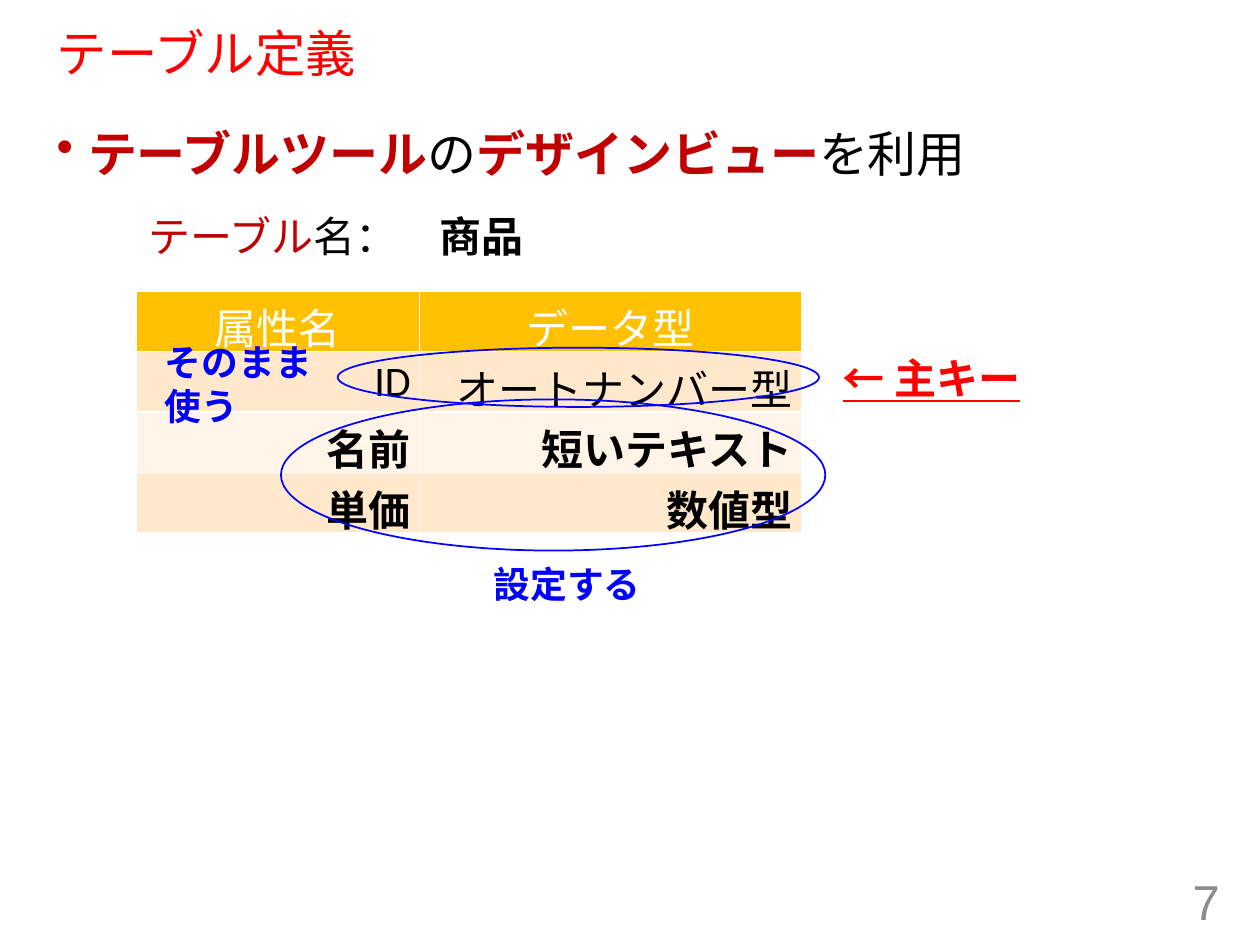
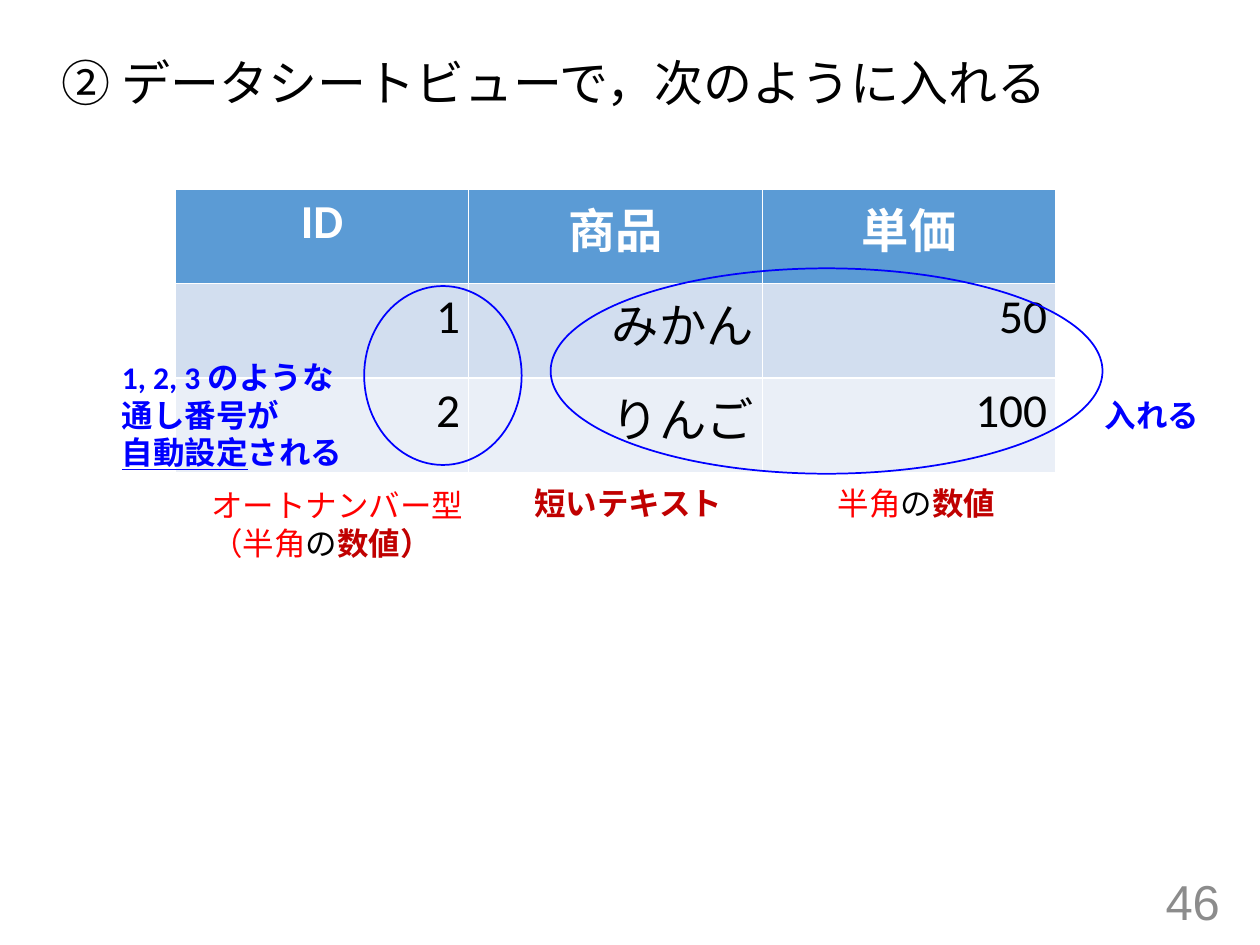
import pptx
import pptx.util
import pptx.dml.color
import pptx.enum.shapes
import pptx.enum.text
import pptx.oxml
import pptx.oxml.ns
from pptx.util import Inches

ALIGN = pptx.enum.text.PP_ALIGN
ANCHOR = pptx.enum.text.MSO_ANCHOR
FIT = pptx.enum.text.MSO_AUTO_SIZE

RED, DARK, BLUE = "FF0000", "C00000", "0000FF"
BLACK, WHITE, GREY = "000000", "FFFFFF", "8C8C8C"
ASIAN = "Noto Sans CJK JP"


def color(code):
    return pptx.dml.color.RGBColor.from_string(code)


def place(box):
    return [Inches(n) for n in box]


def part(text, code=BLACK, bold=False, under=False):
    return text, (code, bold, under)


class Deck:
    font = "Calibri"
    plain = "Arial"
    size = 28

    def __init__(self):
        self.file = pptx.Presentation()
        self.file.slide_width = Inches(10)
        self.file.slide_height = Inches(7.5)
        self.slide = None

    def page(self, number):
        self.slide = self.file.slides.add_slide(self.file.slide_layouts[5])
        box = self.frame((7.53, 6.95, 2.25, 0.4), True)
        box.vertical_anchor = ANCHOR.MIDDLE
        self.line(box.paragraphs[0], [part(str(number), GREY)], self.size, self.plain, ALIGN.RIGHT)

    def ink(self, font, style):
        code, font.bold, font.underline = style
        font.color.rgb = color(code)

    def line(self, para, parts, size, name=None, align=ALIGN.LEFT):
        para.alignment = align
        para.font.size = pptx.util.Pt(size)
        para.font.name = name or self.font
        same = len({style for _, style in parts}) == 1
        if same:
            self.ink(para.font, parts[0][1])
        for text, style in parts:
            run = para.add_run()
            run.text = text
            if not same:
                self.ink(run.font, style)
        props = para._p.get_or_add_pPr().find(pptx.oxml.ns.qn("a:defRPr"))
        east = pptx.oxml.parse_xml(f'<a:ea {pptx.oxml.ns.nsdecls("a")} typeface="{ASIAN}"/>')
        props.append(east)

    def frame(self, box, wrap):
        frame = self.slide.shapes.add_textbox(*place(box)).text_frame
        frame.word_wrap = wrap
        return frame

    def title(self, box, text, code, size, name, anchor):
        shape = self.slide.shapes.title
        shape.left, shape.top, shape.width, shape.height = place(box)
        frame = shape.text_frame
        frame.auto_size = FIT.NONE
        frame.vertical_anchor = anchor
        para = frame.paragraphs[0]
        para.line_spacing = 0.9
        self.line(para, [part(text, code)], size, name)
        return frame

    def bullet(self, box, parts):
        para = self.frame(box, True).paragraphs[0]
        props = para._p.get_or_add_pPr()
        props.set("marL", str(Inches(0.25)))
        props.set("indent", str(-Inches(0.25)))
        mark = pptx.oxml.parse_xml(f'<a:buChar {pptx.oxml.ns.nsdecls("a")} char="•"/>')
        props.append(mark)
        para.space_before = pptx.util.Pt(10)
        self.line(para, parts, self.size, self.plain)

    def note(self, box, lines, size, wrap=False):
        frame = self.frame(box, wrap)
        frame.auto_size = FIT.SHAPE_TO_FIT_TEXT
        for index, parts in enumerate(lines):
            para = frame.add_paragraph() if index else frame.paragraphs[0]
            self.line(para, parts, size)

    def ring(self, box):
        oval = self.slide.shapes.add_shape(pptx.enum.shapes.MSO_SHAPE.OVAL, *place(box))
        oval.shadow.inherit = False
        oval.fill.background()
        oval.line.color.rgb = color(BLUE)
        oval.line.width = pptx.util.Pt(1)

    def table(self, spot, rows, widths, height, size, fills, bolds):
        box = (*spot, sum(widths), height * len(rows))
        table = self.slide.shapes.add_table(len(rows), len(widths), *place(box)).table
        table.horz_banding = False
        for col, width in zip(table.columns, widths):
            col.width = Inches(width)
        for r, texts in enumerate(rows):
            table.rows[r].height = Inches(height)
            for c, text in enumerate(texts):
                cell = table.cell(r, c)
                cell.margin_left = cell.margin_right = Inches(0.07)
                cell.margin_top = cell.margin_bottom = Inches(0.04)
                cell.fill.solid()
                cell.fill.fore_color.rgb = color(fills[0] if r == 0 else fills[2 - r % 2])
                code, align = (BLACK, ALIGN.RIGHT) if r else (WHITE, ALIGN.CENTER)
                para = cell.text_frame.paragraphs[0]
                self.line(para, [part(text, code, r in bolds)], size, align=align)


def define(deck):
    deck.page(7)
    deck.title((0.35, 0.19, 9.25, 0.51), "テーブル定義", RED, 28.8, deck.plain, ANCHOR.MIDDLE)
    deck.bullet((0.35, 0.93, 9.25, 0.74), [
        part("テーブルツール", DARK, True), part("の"),
        part("デザインビュー", DARK, True), part("を利用")])
    rows = [("属性名", "データ型"), ("ID", "オートナンバー型"),
            ("名前", "短いテキスト"), ("単価", "数値型")]
    deck.table((1.08, 2.31), rows, (2.25, 3.03), 0.47, 24,
               ("FFC000", "FFE8CC", "FFF4E7"), (2, 3))
    deck.note((6.59, 2.75, 3.92, 0.5), [[part("← 主キー", RED, True, True)]], 24, True)
    deck.ring((2.68, 2.76, 3.82, 0.47))
    deck.ring((2.23, 3.17, 4.32, 1.2))
    deck.note((3.82, 4.41, 1.38, 0.45), [[part("設定する", BLUE, True)]], 21)
    deck.note((1.21, 2.65, 1.38, 0.81),
              [[part(text, BLUE, True)] for text in ("そのまま", "使う")], 21)
    deck.note((1.08, 1.62, 3.23, 0.5), [[
        part("テーブル", DARK), part("名：　"), part("商品", BLACK, True)]], 24)


def enter(deck):
    deck.page(46)
    head = deck.title((0.42, 0.43, 8.78, 0.57), "② データシートビューで，次のように入れる",
                      BLACK, deck.size, ASIAN, ANCHOR.TOP)
    head.margin_left = head.margin_right = Inches(0.07)
    head.margin_top = head.margin_bottom = Inches(0.04)
    head.paragraphs[0].space_before = pptx.util.Pt(10)
    rows = [("ID", "商品", "単価"), ("1", "みかん", "50"), ("2", "りんご", "100")]
    deck.table((1.39, 1.5), rows, [2.33] * 3, 0.75, 27,
               ("5B9BD5", "D2DEEF", "EAEFF7"), (0,))
    half = [part("半角", RED), part("の")]
    deck.note((1.58, 3.81, 2.22, 1.01), [
        [part("オートナンバー型", RED)],
        [part("（", RED), *half, part("数値）", DARK, True)]], 18)
    deck.note((4.14, 3.79, 1.72, 0.4), [[part("短いテキスト", DARK, True)]], 18)
    deck.note((6.55, 3.79, 1.46, 0.4), [[*half, part("数値", DARK, True)]], 18)
    deck.ring((2.89, 2.27, 1.25, 1.42))
    deck.note((0.87, 2.79, 1.97, 1.01), [
        [part("1, 2, 3 のような", BLUE, True)],
        [part("通し番号が", BLUE, True)],
        [part("自動設定", BLUE, True, True), part("される", BLUE, True)]], 18)
    deck.ring((4.37, 2.13, 4.38, 1.63))
    deck.note((8.67, 3.09, 0.96, 0.4), [[part("入れる", BLUE, True)]], 18)


def main():
    deck = Deck()
    define(deck)
    enter(deck)
    deck.file.save("out.pptx")


if __name__ == "__main__":
    main()
